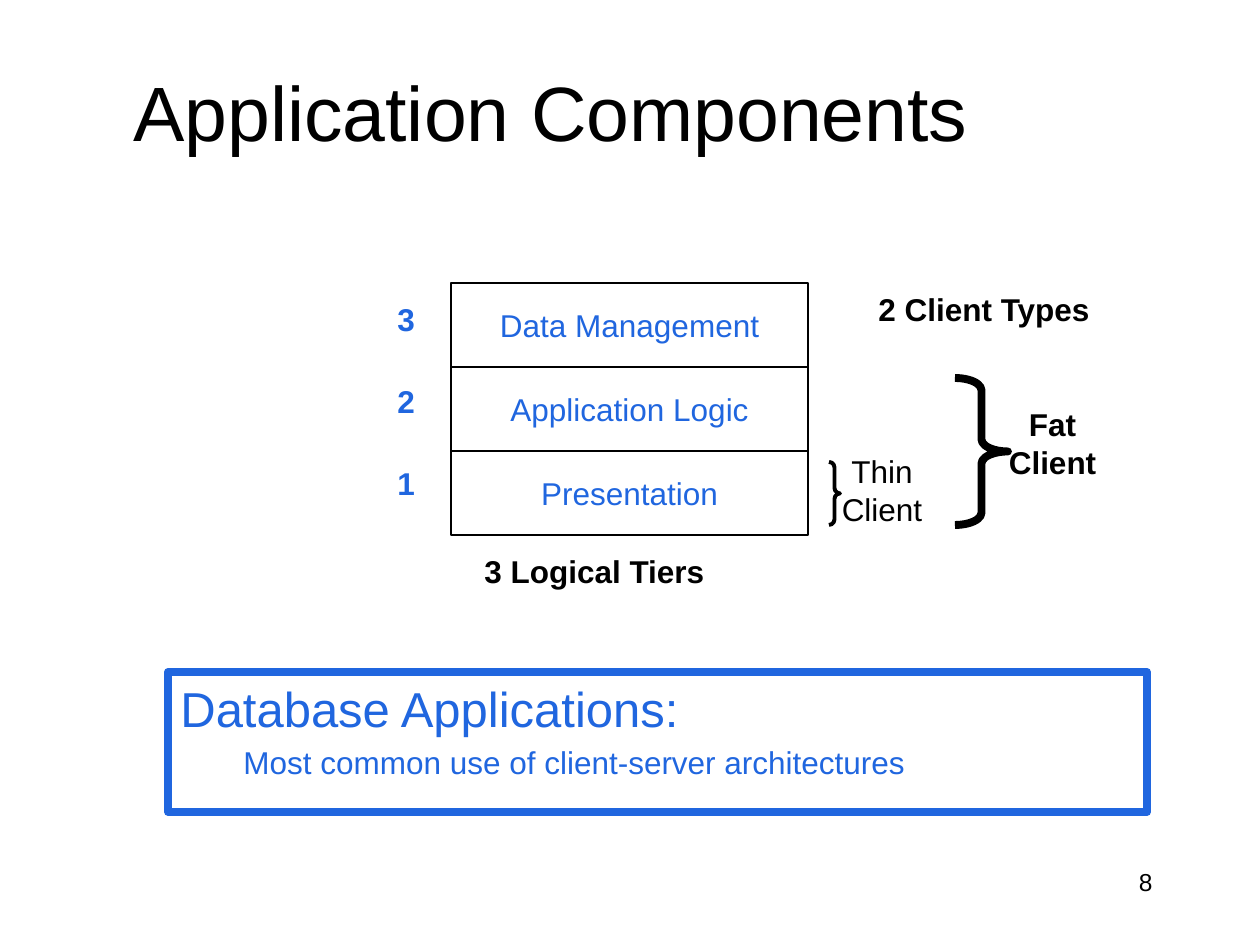
from dataclasses import dataclass

from pptx import Presentation
from pptx.dml.color import RGBColor
from pptx.enum.shapes import MSO_SHAPE
from pptx.enum.text import MSO_ANCHOR, PP_ALIGN
from pptx.util import Emu, Pt

LEFT, CENTER, RIGHT = PP_ALIGN.LEFT, PP_ALIGN.CENTER, PP_ALIGN.RIGHT
TOP, MIDDLE = MSO_ANCHOR.TOP, MSO_ANCHOR.MIDDLE
RECTANGLE, RIGHT_BRACE = MSO_SHAPE.RECTANGLE, MSO_SHAPE.RIGHT_BRACE
PX_PER_INCH = 126


@dataclass(frozen=True)
class Theme:
    font: str = "Arial"
    black: RGBColor = RGBColor(0, 0, 0)
    blue: RGBColor = RGBColor(0x20, 0x66, 0xDF)
    title: int = 44
    heading: int = 28
    body: int = 18
    number: int = 14


THEME = Theme()


@dataclass(frozen=True)
class Box:
    left: int
    top: int
    width: int
    height: int

    def emu(self) -> list[Emu]:
        return [px(n) for n in (self.left, self.top, self.width, self.height)]


@dataclass(frozen=True)
class Label:
    box: Box
    lines: tuple[str, ...]
    size: int = THEME.body
    color: RGBColor = THEME.black
    bold: bool = False
    align: PP_ALIGN = LEFT
    anchor: MSO_ANCHOR = TOP


@dataclass(frozen=True)
class Brace:
    box: Box
    curve: float
    weight: float


def px(length: int) -> Emu:
    return Emu(round(length * 914400 / PX_PER_INCH))


def set_all(target, values: dict) -> None:
    for name, value in values.items():
        setattr(target, name, value)


def style_paragraph(paragraph, text: str, size: int, color: RGBColor,
                    bold: bool = False, align: PP_ALIGN = LEFT) -> None:
    paragraph.text = text
    paragraph.alignment = align
    set_all(paragraph.font, {"name": THEME.font, "size": Pt(size), "bold": bold})
    paragraph.font.color.rgb = color


def write_lines(frame, label: Label) -> None:
    # Centred text stays centred without wrapping, even in a tight box
    set_all(frame, {"word_wrap": label.align != CENTER,
                    "vertical_anchor": label.anchor})
    for index, line in enumerate(label.lines):
        paragraph = frame.add_paragraph() if index else frame.paragraphs[0]
        style_paragraph(paragraph, line, label.size, label.color,
                        label.bold, label.align)


def draw_label(slide, label: Label) -> None:
    write_lines(slide.shapes.add_textbox(*label.box.emu()).text_frame, label)


def draw_outline(slide, kind: MSO_SHAPE, box: Box, color: RGBColor, weight: float):
    shape = slide.shapes.add_shape(kind, *box.emu())
    shape.shadow.inherit = False
    shape.fill.background()
    shape.line.color.rgb = color
    shape.line.width = Pt(weight)
    return shape


def draw_brace(slide, brace: Brace) -> None:
    shape = draw_outline(slide, RIGHT_BRACE, brace.box, THEME.black, brace.weight)
    shape.adjustments[0] = brace.curve
    shape.adjustments[1] = 0.5


def draw_tiers(slide, names: tuple[str, ...]) -> None:
    for index, name in enumerate(names):
        box = Box(451, 283 + 84 * index, 357, 84)
        tier = draw_outline(slide, RECTANGLE, box, THEME.black, 0.75)
        write_lines(tier.text_frame, Label(box, (name,), color=THEME.blue,
                                           align=CENTER, anchor=MIDDLE))
        draw_label(slide, Label(Box(385, 294 + 82 * index, 49, 63),
                                (str(len(names) - index),),
                                color=THEME.blue, bold=True))


def draw_summary(slide, heading: str, detail: str) -> None:
    box = Box(168, 672, 979, 140)
    summary = draw_outline(slide, RECTANGLE, box, THEME.blue, 4.5)
    frame = summary.text_frame
    write_lines(frame, Label(box, (heading,), THEME.heading, THEME.blue))
    point = frame.add_paragraph()
    point.level = 1
    point.space_before = Pt(3.6)
    point._p.get_or_add_pPr().set("marL", str(px(63)))
    style_paragraph(point, detail, THEME.body, THEME.blue)


LABELS = (
    Label(Box(94, 32, 914, 157), ("Application Components",), THEME.title,
          align=CENTER, anchor=MIDDLE),
    Label(Box(472, 546, 319, 63), ("3 Logical Tiers",), bold=True),
    Label(Box(866, 284, 310, 63), ("2 Client Types",), bold=True),
    Label(Box(829, 446, 106, 88), ("Thin", "Client"), align=CENTER),
    Label(Box(981, 399, 143, 113), ("Fat", "Client"), bold=True, align=CENTER),
    Label(Box(903, 861, 262, 63), ("8",), THEME.number, align=RIGHT),
)
BRACES = (
    Brace(Box(955, 378, 53, 147), 0.23, 4.5),  # fat client
    Brace(Box(829, 462, 11, 63), 0.5, 2.25),  # thin client
)


def main() -> None:
    deck = Presentation()
    set_all(deck, {"slide_width": px(1260), "slide_height": px(945)})
    slide = deck.slides.add_slide(deck.slide_layouts[6])

    # Logical tiers, numbered from the bottom up
    draw_tiers(slide, ("Data Management", "Application Logic", "Presentation"))

    # Client types
    for brace in BRACES:
        draw_brace(slide, brace)

    # Title, captions and slide number
    for label in LABELS:
        draw_label(slide, label)

    # Closing remark
    draw_summary(slide, "Database Applications:",
                 "Most common use of client-server architectures")

    deck.save("out.pptx")


if __name__ == "__main__":
    main()
